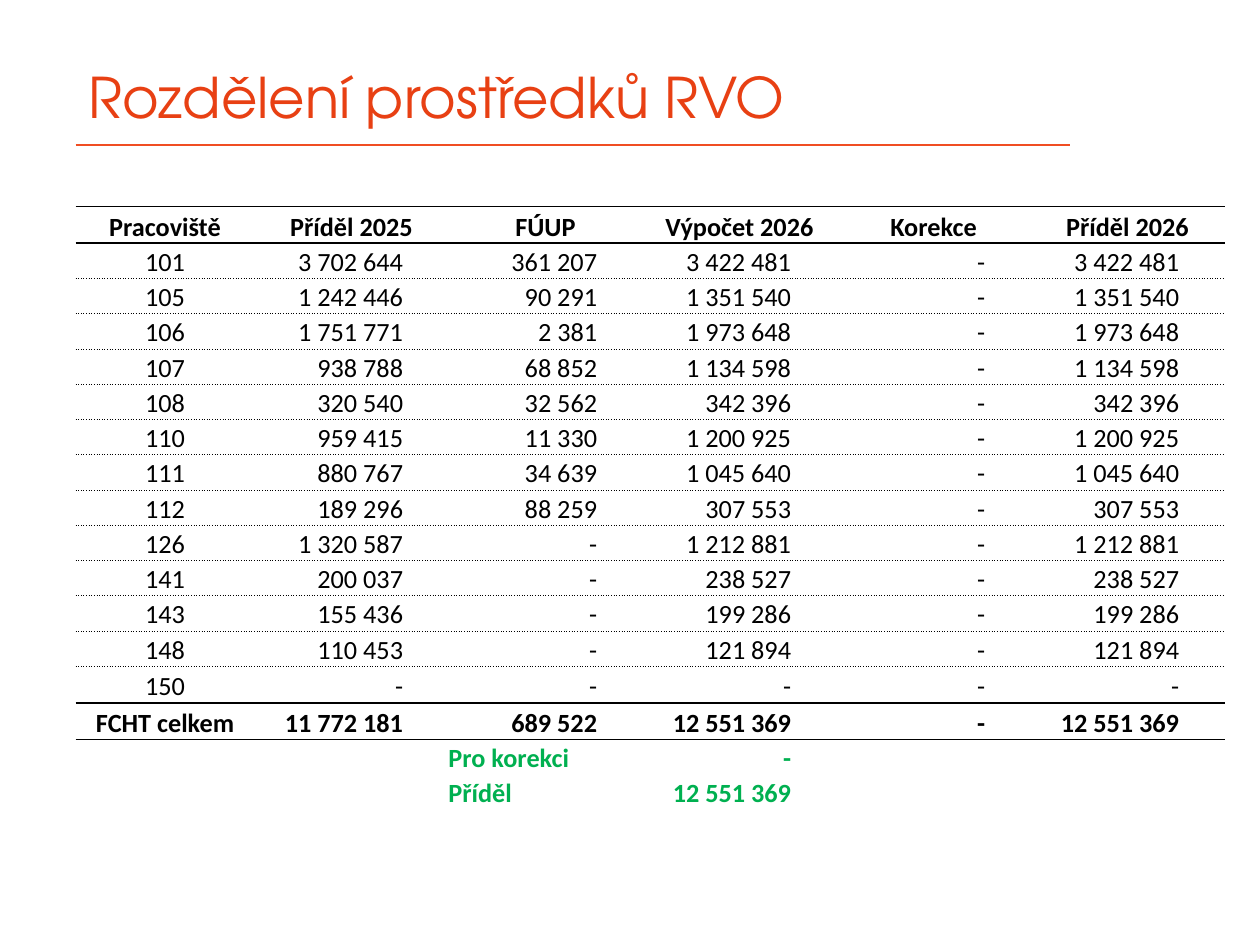
from dataclasses import dataclass

from lxml import etree
from pptx import Presentation
from pptx.dml.color import RGBColor
from pptx.enum.shapes import MSO_CONNECTOR
from pptx.enum.text import MSO_ANCHOR, PP_ALIGN
from pptx.oxml.ns import qn
from pptx.util import Inches, Pt

LEFT, CENTER, RIGHT = PP_ALIGN.LEFT, PP_ALIGN.CENTER, PP_ALIGN.RIGHT
MIDDLE, BOTTOM = MSO_ANCHOR.MIDDLE, MSO_ANCHOR.BOTTOM
STRAIGHT = MSO_CONNECTOR.STRAIGHT
PLAIN = "{2D5ABB26-0587-4C30-8999-92F81FD0307C}"  # no style, no grid


@dataclass(frozen=True)
class Theme:
    head: str = "TeX Gyre Adventor"
    body: str = "Calibri"
    title: str = "E84013"
    rule: str = "F04E23"
    ink: str = "000000"
    green: str = "00B050"
    big: int = 32
    small: int = 15


THEME = Theme()
WIDE, HIGH = 10, 7.5
EDGE = 0.06 * WIDE
COLS = [1.42] + [1.54] * 5
TALL, ROW = 0.29, 0.28
PAD = 0.36

HEAD = ["Pracoviště", "Příděl 2025", "FÚUP", "Výpočet 2026", "Korekce", "Příděl 2026"]
# site, grant 2025, FÚUP, grant 2026 (no correction, so it equals the calculation)
SITES = [
    ("101", "3 702 644", "361 207", "3 422 481"),
    ("105", "1 242 446", "90 291", "1 351 540"),
    ("106", "1 751 771", "2 381", "1 973 648"),
    ("107", "938 788", "68 852", "1 134 598"),
    ("108", "320 540", "32 562", "342 396"),
    ("110", "959 415", "11 330", "1 200 925"),
    ("111", "880 767", "34 639", "1 045 640"),
    ("112", "189 296", "88 259", "307 553"),
    ("126", "1 320 587", "-", "1 212 881"),
    ("141", "200 037", "-", "238 527"),
    ("143", "155 436", "-", "199 286"),
    ("148", "110 453", "-", "121 894"),
    ("150", "-", "-", "-"),
    ("FCHT celkem", "11 772 181", "689 522", "12 551 369"),
]
NOTES = [("Pro korekci", "-"), ("Příděl", "12 551 369")]


def style(run, face, size, color, bold=False):
    font = run.font
    font.name, font.size, font.bold = face, Pt(size), bold
    font.color.rgb = RGBColor.from_string(color)


def add_title(slide, text):
    box = slide.shapes.title
    box.left, box.top = Inches(EDGE), Inches(0.07 * HIGH)
    box.width, box.height = Inches(0.8 * WIDE), Inches(0.55)
    frame = box.text_frame
    frame.text = text
    frame.vertical_anchor = MIDDLE
    para = frame.paragraphs[0]
    para.alignment, para.line_spacing = LEFT, 0.9
    style(para.runs[0], THEME.head, THEME.big, THEME.title)


def add_rule(slide, y, end):
    line = slide.shapes.add_connector(
        STRAIGHT, Inches(EDGE), Inches(y), Inches(end), Inches(y))
    line.line.color.rgb = RGBColor.from_string(THEME.rule)
    line.line.width = Pt(1)
    etree.SubElement(line._element.spPr, qn("a:effectLst"))


def set_edge(cell, side, kind):
    """Draw one cell border; kind is 'solid', 'sysDot' or None."""
    width = Pt(1) if kind == "solid" else Pt(0.5)
    edge = etree.SubElement(
        cell._tc.get_or_add_tcPr(), qn(f"a:{side}"), w=str(int(width)))
    if kind is None:
        etree.SubElement(edge, qn("a:noFill"))
        return
    fill = etree.SubElement(edge, qn("a:solidFill"))
    etree.SubElement(fill, qn("a:srgbClr"), val=THEME.ink)
    etree.SubElement(edge, qn("a:prstDash"), val=kind)


def fill_cell(cell, text, align, color, bold):
    cell.margin_left = cell.margin_top = cell.margin_bottom = 0
    cell.margin_right = Inches(PAD) if align == RIGHT else 0
    cell.vertical_anchor = BOTTOM
    cell.fill.background()
    para = cell.text_frame.paragraphs[0]
    para.alignment = align
    if text:
        para.text = text
        style(para.runs[0], THEME.body, THEME.small, color, bold)
    else:
        # keeps an empty cell from stretching its row
        para._p.get_or_add_endParaRPr().set("sz", str(THEME.small * 100))


def add_grid(slide):
    sites = [[name, old, extra, new, "-", new] for name, old, extra, new in SITES]
    notes = [["", "", label, value, "", ""] for label, value in NOTES]
    rows = [HEAD] + sites + notes
    total = len(sites)
    tall = (0, total - 1, total)
    highs = [TALL if r in tall else ROW for r in range(len(rows))]
    # one rule above each row, and one below the last
    rules = (["solid"] * 2 + ["sysDot"] * (total - 2) + ["solid"] * 2
             + [None] * len(notes))

    frame = slide.shapes.add_table(
        len(rows), len(COLS), Inches(EDGE), Inches(1.64),
        Inches(sum(COLS)), Inches(sum(highs)))
    table = frame.table
    table.first_row = table.horz_banding = False
    table._tbl.tblPr.find(qn("a:tableStyleId")).text = PLAIN
    for col, width in zip(table.columns, COLS):
        col.width = Inches(width)
    for r, row in enumerate(rows):
        table.rows[r].height = Inches(highs[r])
        color = THEME.green if r > total else THEME.ink
        for c, text in enumerate(row):
            cell = table.cell(r, c)
            set_edge(cell, "lnT", rules[r])
            set_edge(cell, "lnB", rules[r + 1])
            if r == 0 or c == 0:
                align = CENTER
            else:
                align = LEFT if r > total and c == 2 else RIGHT
            fill_cell(cell, text, align, color, r == 0 or r >= total)


def main():
    deck = Presentation()
    deck.slide_width, deck.slide_height = Inches(WIDE), Inches(HIGH)
    slide = deck.slides.add_slide(deck.slide_layouts[5])
    add_rule(slide, 1.15, 8.49)
    add_title(slide, "Rozdělení prostředků RVO")
    add_grid(slide)
    deck.save("out.pptx")


if __name__ == "__main__":
    main()
